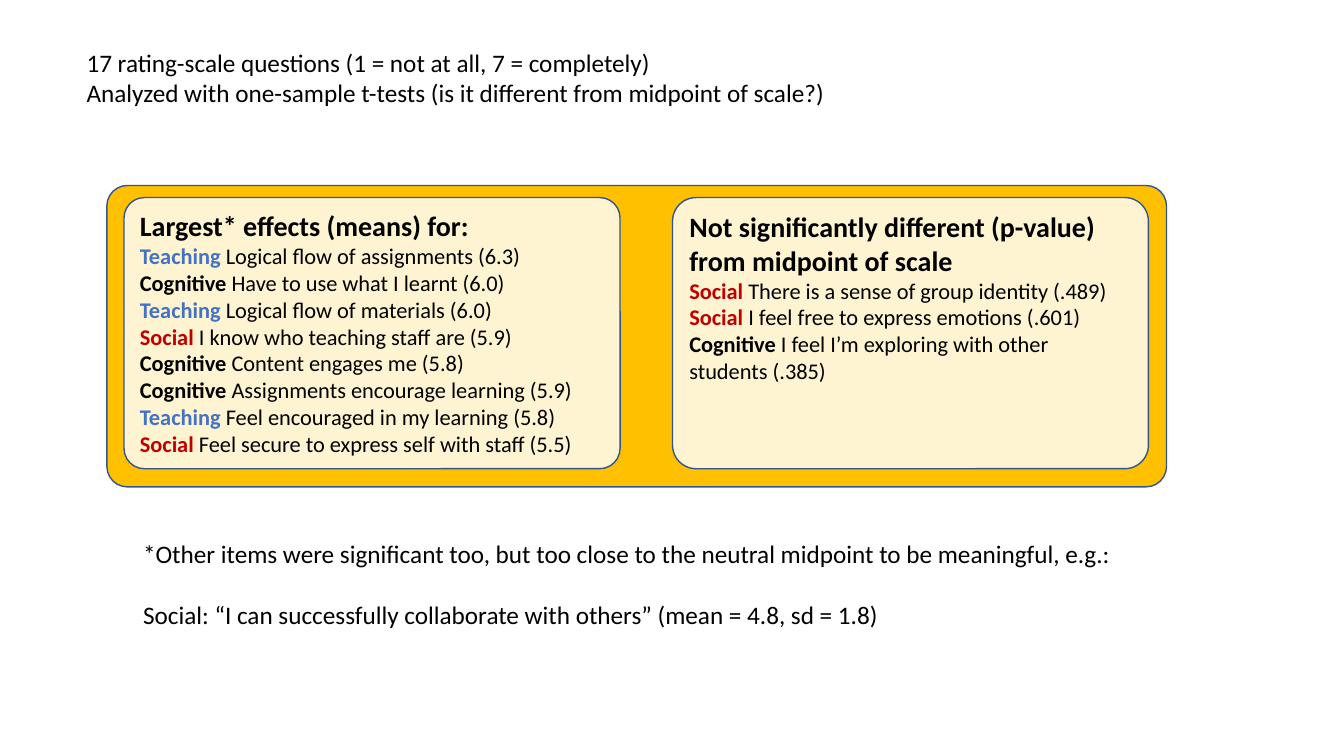
from pptx import Presentation
from pptx.dml.color import RGBColor
from pptx.enum.shapes import MSO_SHAPE as SHAPE
from pptx.enum.text import MSO_ANCHOR as ANCHOR, MSO_AUTO_SIZE as AUTO, PP_ALIGN as ALIGN
from pptx.util import Inches, Pt

COLORS = {
    "text": "000000",
    "frame": "FFC000",
    "panel": "FFF4D1",
    "outline": "325491",
    "Teaching": "4472C4",
    "Cognitive": "000000",
    "Social": "C00000",
}

LARGEST_EFFECTS = [
    ("Teaching", "Logical flow of assignments (6.3)"),
    ("Cognitive", "Have to use what I learnt (6.0)"),
    ("Teaching", "Logical flow of materials (6.0)"),
    ("Social", "I know who teaching staff are (5.9)"),
    ("Cognitive", "Content engages me (5.8)"),
    ("Cognitive", "Assignments encourage learning (5.9)"),
    ("Teaching", "Feel encouraged in my learning (5.8)"),
    ("Social", "Feel secure to express self with staff (5.5)"),
]
NOT_SIGNIFICANT = [
    ("Social", "There is a sense of group identity (.489)"),
    ("Social", "I feel free to express emotions (.601)"),
    ("Cognitive", "I feel I’m exploring with other students (.385)"),
]


def rgb(name):
    return RGBColor.from_string(COLORS[name])


class SlideBuilder:
    font = "Calibri"
    heading_size, item_size, note_size = 20, 16, 18

    def __init__(self, slide):
        self.slide = slide

    def style(self, font, size, color="text", bold=False):
        font.name, font.size, font.bold = self.font, Pt(size), bold
        font.color.rgb = rgb(color)

    def rounded_box(self, box, radius, fill):
        sp = self.slide.shapes.add_shape(SHAPE.ROUNDED_RECTANGLE, *map(Inches, box))
        sp.adjustments[0] = radius
        sp.shadow.inherit = False
        sp.fill.solid()
        sp.fill.fore_color.rgb = rgb(fill)
        sp.line.color.rgb = rgb("outline")
        sp.line.width = Pt(1)
        return sp

    def panel(self, box, radius, heading, items):
        """Add a box with a heading and items led by a coloured category."""
        tf = self.rounded_box(box, radius, "panel").text_frame
        tf.word_wrap = True
        tf.vertical_anchor = ANCHOR.TOP
        p = tf.paragraphs[0]
        p.text = heading
        p.alignment = ALIGN.LEFT
        self.style(p.font, self.heading_size, bold=True)
        for category, wording in items:
            p = tf.add_paragraph()
            p.alignment = ALIGN.LEFT
            r = p.add_run()
            r.text = category
            self.style(r.font, self.item_size, category, bold=True)
            r = p.add_run()
            r.text = f" {wording}"
            self.style(r.font, self.item_size)

    def note(self, box, lines, gap=0):
        """Add unwrapped lines of text, gap points apart."""
        tf = self.slide.shapes.add_textbox(*map(Inches, box)).text_frame
        tf.word_wrap = False
        tf.auto_size = AUTO.SHAPE_TO_FIT_TEXT
        for i, line in enumerate(lines):
            p = tf.add_paragraph() if i else tf.paragraphs[0]
            p.text = line
            p.space_before = Pt(gap if i else 0)
            self.style(p.font, self.note_size)


def main():
    prs = Presentation()
    prs.slide_width, prs.slide_height = Inches(13.33), Inches(7.5)
    s = SlideBuilder(prs.slides.add_slide(prs.slide_layouts[6]))

    s.rounded_box((1.06, 1.84, 10.51, 2.99), 0.068, "frame")
    s.panel((1.23, 1.96, 4.92, 2.69), 0.075,
            "Largest* effects (means) for:", LARGEST_EFFECTS)
    s.panel((6.67, 1.96, 4.72, 2.69), 0.087,
            "Not significantly different (p-value) from midpoint of scale",
            NOT_SIGNIFICANT)
    s.note((0.76, 0.42, 7.62, 0.71), [
        "17 rating-scale questions (1 = not at all, 7 = completely)",
        "Analyzed with one-sample t-tests (is it different from midpoint of scale?)",
    ])
    s.note((1.32, 5.29, 9.91, 1.01), [
        "*Other items were significant too, but too close to the neutral midpoint"
        " to be meaningful, e.g.:",
        "Social: “I can successfully collaborate with others” (mean = 4.8, sd = 1.8)",
    ], gap=22)
    prs.save("out.pptx")


if __name__ == "__main__":
    main()
